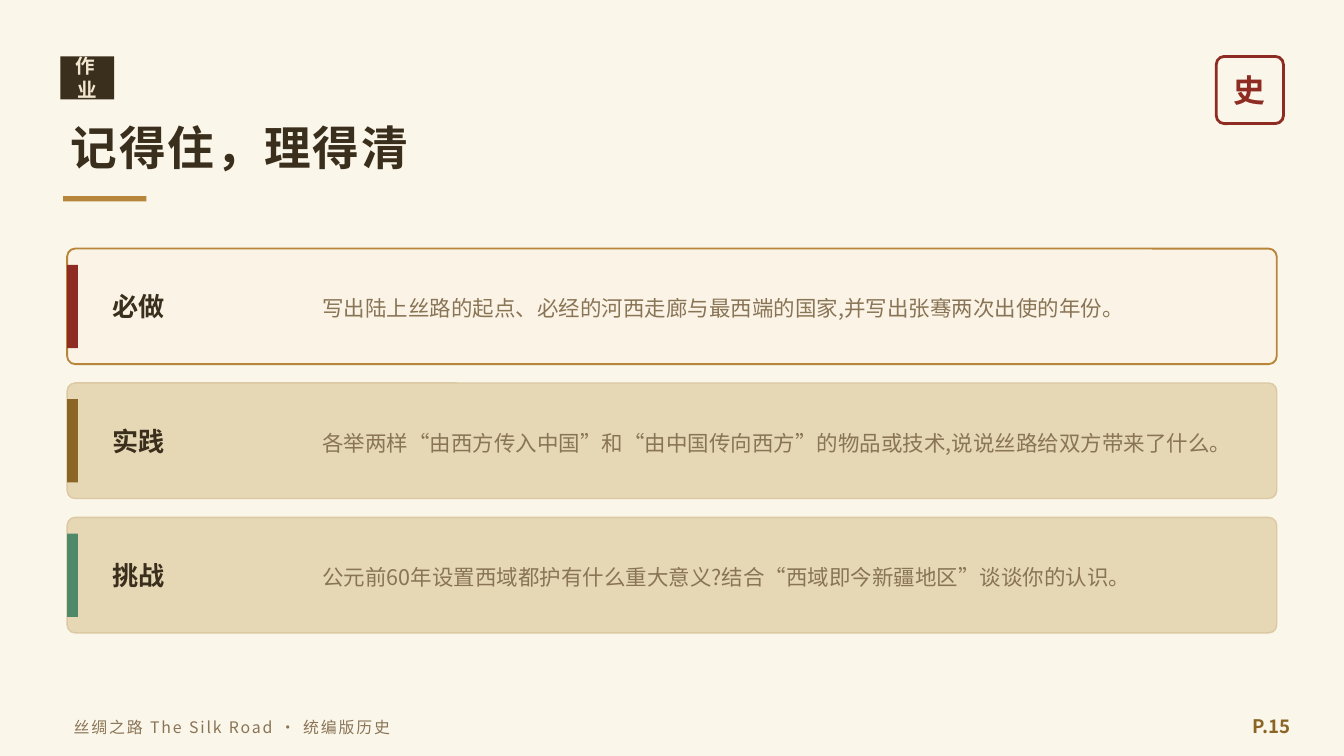
from lxml.etree import SubElement
from pptx import Presentation
from pptx.dml.color import RGBColor
from pptx.enum.shapes import MSO_SHAPE as Shape
from pptx.enum.text import MSO_ANCHOR as Anchor, PP_ALIGN as Align
from pptx.oxml.ns import qn
from pptx.util import Inches, Pt

INK = RGBColor(0x3A, 0x2E, 0x1C)
CREAM = RGBColor(0xFB, 0xF6, 0xEA)
PARCHMENT = RGBColor(0xF1, 0xE6, 0xCE)
GOLD = RGBColor(0xB8, 0x86, 0x3B)
RED = RGBColor(0x8E, 0x2B, 0x22)
BROWN = RGBColor(0x8A, 0x65, 0x26)
GREEN = RGBColor(0x4E, 0x8A, 0x6A)
MUTED = RGBColor(0x89, 0x75, 0x56)
IVORY = RGBColor(0xFB, 0xF4, 0xE6)
SAND = RGBColor(0xE6, 0xD7, 0xB5)
SAND_EDGE = RGBColor(0xDC, 0xC9, 0xA3)


class LessonSlide:
    font = "Noto Sans CJK SC"

    def __init__(self, slide, background):
        self.slide = slide
        slide.background.fill.solid()
        slide.background.fill.fore_color.rgb = background

    def panel(self, left, top, width, height, fill=None, line=None,
              weight=1, radius=None):
        kind = Shape.RECTANGLE if radius is None else Shape.ROUNDED_RECTANGLE
        panel = self.slide.shapes.add_shape(
            kind, Inches(left), Inches(top), Inches(width), Inches(height))
        panel.shadow.inherit = False
        if radius is not None:
            panel.adjustments[0] = radius
        if fill is None:
            panel.fill.background()
        else:
            panel.fill.solid()
            panel.fill.fore_color.rgb = fill
        if line is None:
            panel.line.fill.background()
        else:
            panel.line.color.rgb = line
            panel.line.width = Pt(weight)

    def text(self, left, top, width, height, words, size, color, bold=False,
             align=Align.LEFT, tracking=0, leading=None):
        box = self.slide.shapes.add_textbox(
            Inches(left), Inches(top), Inches(width), Inches(height))
        frame = box.text_frame
        frame.word_wrap = True
        frame.vertical_anchor = Anchor.MIDDLE
        paragraph = frame.paragraphs[0]
        paragraph.alignment = align
        if leading:
            paragraph.line_spacing = Pt(leading)
        run = paragraph.add_run()
        run.text = words
        run.font.size = Pt(size)
        run.font.bold = bold
        run.font.color.rgb = color
        run.font.name = self.font
        properties = run._r.get_or_add_rPr()
        SubElement(properties, qn("a:ea")).set("typeface", self.font)
        if tracking:
            properties.set("spc", str(tracking * 100))

    def task(self, top, label, content, accent, fill, line, weight):
        self.panel(0.5, top, 9, 0.86, fill, line, weight, radius=0.07)
        self.panel(0.5, top + 0.12, 0.08, 0.62, accent)
        self.text(0.74, top + 0.1, 1.4, 0.66, label, 14, INK, bold=True)
        self.text(2.3, top + 0.08, 7, 0.7, content, 11.5, MUTED, leading=16)


TASKS = [
    ("必做", "写出陆上丝路的起点、必经的河西走廊与最西端的国家,并写出张骞两次出使的年份。",
     RED, IVORY, GOLD, 1),
    ("实践", "各举两样“由西方传入中国”和“由中国传向西方”的物品或技术,说说丝路给双方带来了什么。",
     BROWN, SAND, SAND_EDGE, 0.75),
    ("挑战", "公元前60年设置西域都护有什么重大意义?结合“西域即今新疆地区”谈谈你的认识。",
     GREEN, SAND, SAND_EDGE, 0.75),
]


def main():
    deck = Presentation()
    deck.slide_width = Inches(10)
    deck.slide_height = Inches(10 * 9 / 16)
    homework = LessonSlide(deck.slides.add_slide(deck.slide_layouts[6]), CREAM)

    homework.panel(0.45, 0.42, 0.4, 0.32, INK)
    homework.text(0.45, 0.41, 0.4, 0.34, "作业", 10.5, PARCHMENT, bold=True,
                  align=Align.CENTER, tracking=2)
    homework.text(0.43, 0.78, 9, 0.62, "记得住，理得清", 25, INK, bold=True,
                  tracking=1)
    homework.panel(0.47, 1.46, 0.62, 0.04, GOLD)
    homework.panel(9.05, 0.42, 0.5, 0.5, line=RED, weight=1.5, radius=0.12)
    homework.text(9.05, 0.41, 0.5, 0.52, "史", 17, RED, bold=True,
                  align=Align.CENTER)

    for row, task in enumerate(TASKS):
        homework.task(1.85 + row, *task)

    homework.text(0.45, 5.26, 6.8, 0.3, "丝绸之路 The Silk Road · 统编版历史",
                  8.5, MUTED, tracking=1)
    homework.text(9.1, 5.24, 0.6, 0.32, "P.15", 10, BROWN, bold=True,
                  align=Align.RIGHT)

    deck.save("out.pptx")


if __name__ == "__main__":
    main()
